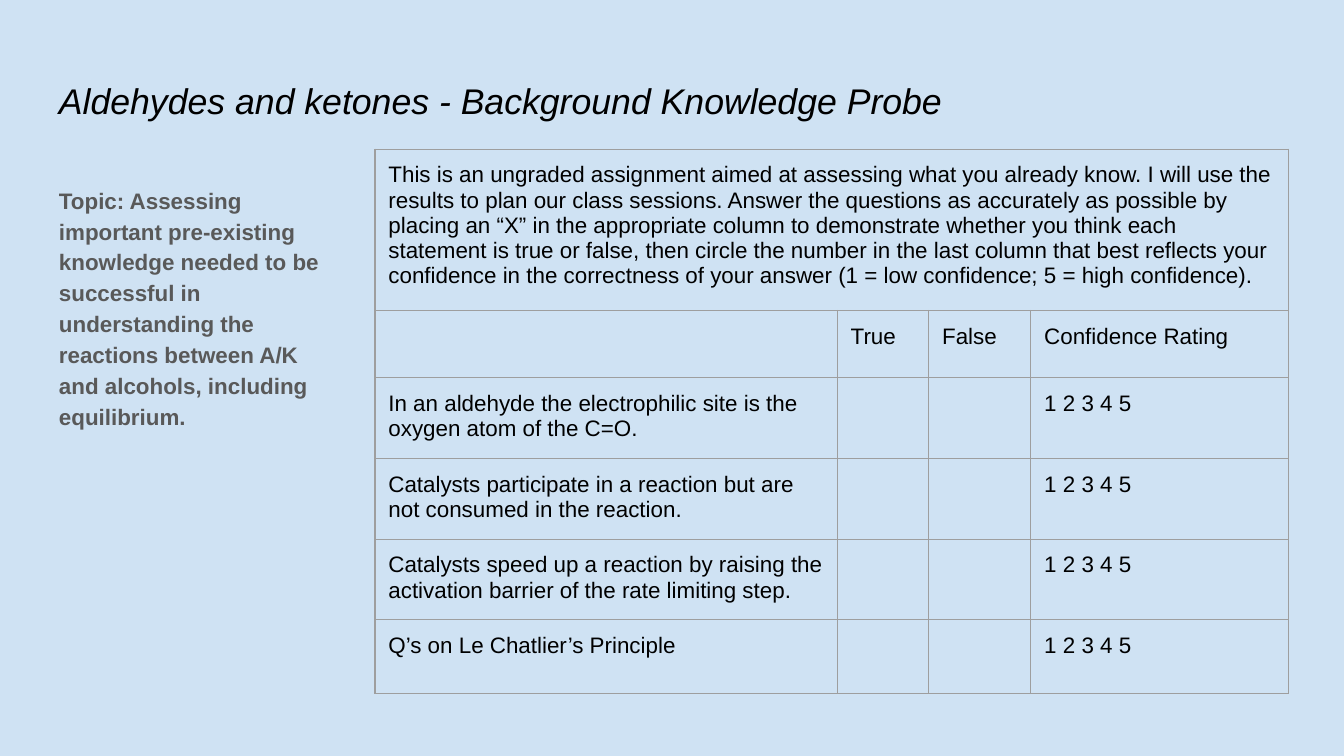
from lxml import etree
from pptx import Presentation
from pptx.dml.color import RGBColor
from pptx.enum.text import MSO_ANCHOR
from pptx.oxml.ns import qn
from pptx.util import Inches, Pt

TOP = MSO_ANCHOR.TOP
COLORS = {"background": "CFE2F3", "text": "000000", "topic": "595959", "border": "9E9E9E"}

# Content
TITLE = "Aldehydes and ketones - Background Knowledge Probe"
TOPIC = ("Topic: Assessing important pre-existing knowledge needed to be successful in "
         "understanding the reactions between A/K and alcohols, including equilibrium.")
INSTRUCTIONS = (
    "This is an ungraded assignment aimed at assessing what you already know. I will use "
    "the results to plan our class sessions. Answer the questions as accurately as possible "
    "by placing an “X” in the appropriate column to demonstrate whether you think each "
    "statement is true or false, then circle the number in the last column that best reflects "
    "your confidence in the correctness of your answer (1 = low confidence; 5 = high confidence).")
HEADER = ["", "True", "False", "Confidence Rating"]
STATEMENTS = [
    "In an aldehyde the electrophilic site is the oxygen atom of the C=O.",
    "Catalysts participate in a reaction but are not consumed in the reaction.",
    "Catalysts speed up a reaction by raising the activation barrier of the rate limiting step.",
    "Q’s on Le Chatlier’s Principle",
]
RATING = "1 2 3 4 5"
ROWS = [[INSTRUCTIONS, "", "", ""], HEADER] + [[s, "", "", RATING] for s in STATEMENTS]

# Layout and formats
SLIDE_WIDTH = 10
SLIDE_HEIGHT = SLIDE_WIDTH * 9 / 16
COL_WIDTHS = [3.44, 0.68, 0.76, 1.92]
ROW_HEIGHTS = [0.9, 0.41, 0.57, 0.6, 0.58, 0.55]  # rows grow to fit their text
TABLE_LEFT, TABLE_TOP, TABLE_SIZE = 2.79, 1.11, 3.28
MARGINS = dict.fromkeys(
    ("margin_left", "margin_right", "margin_top", "margin_bottom"), Inches(0.1))
TITLE_FONT = {"name": "Arial", "size": Pt(19.1), "italic": True}
TOPIC_FONT = {"name": "Arial", "size": Pt(12), "bold": True}
CELL_FONT = {"name": "Arial", "size": Pt(12)}


def set_attrs(obj, values):
    for name, value in values.items():
        setattr(obj, name, value)


def write(p, text, font, color):
    r = p.add_run()
    r.text = text
    set_attrs(r.font, font)
    r.font.color.rgb = RGBColor.from_string(COLORS[color])


def add_text(slide, box, text, font, color, spacing=1.0):
    tf = slide.shapes.add_textbox(*map(Inches, box)).text_frame
    set_attrs(tf, {**MARGINS, "word_wrap": True, "vertical_anchor": TOP})
    p = tf.paragraphs[0]
    p.line_spacing = spacing
    write(p, text, font, color)


def add_borders(cell):
    tcPr = cell._tc.get_or_add_tcPr()
    for i, side in enumerate(("lnL", "lnR", "lnT", "lnB")):
        ln = etree.Element(qn(f"a:{side}"), w=str(Pt(0.75)))
        fill = etree.SubElement(ln, qn("a:solidFill"))
        etree.SubElement(fill, qn("a:srgbClr"), val=COLORS["border"])
        tcPr.insert(i, ln)  # borders come before the fill


prs = Presentation()
prs.slide_width, prs.slide_height = Inches(SLIDE_WIDTH), Inches(SLIDE_HEIGHT)
s = prs.slides.add_slide(prs.slide_layouts[6])
s.background.fill.solid()
s.background.fill.fore_color.rgb = RGBColor.from_string(COLORS["background"])

# Title and topic
add_text(s, (0.34, 0.49, 9.32, 0.63), TITLE, TITLE_FONT, "text")
add_text(s, (0.34, 1.26, 2.18, 3.74), TOPIC, TOPIC_FONT, "topic", 1.15)

# Questionnaire table
frame = s.shapes.add_table(
    len(ROWS), len(COL_WIDTHS), Inches(TABLE_LEFT), Inches(TABLE_TOP),
    Inches(TABLE_SIZE), Inches(TABLE_SIZE))
table = frame.table
set_attrs(table, {"first_row": False, "horz_banding": False})
for col, width in zip(table.columns, COL_WIDTHS):
    col.width = Inches(width)
for row, height, texts in zip(table.rows, ROW_HEIGHTS, ROWS):
    row.height = Inches(height)
    for cell, text in zip(row.cells, texts):
        set_attrs(cell, {**MARGINS, "vertical_anchor": TOP})
        cell.fill.background()
        add_borders(cell)
        if text:
            write(cell.text_frame.paragraphs[0], text, CELL_FONT, "text")
table.cell(0, 0).merge(table.cell(0, len(COL_WIDTHS) - 1))
# Row and column sizes reset the frame, so its size is set last
set_attrs(frame, {"width": Inches(TABLE_SIZE), "height": Inches(TABLE_SIZE)})

prs.save("out.pptx")
